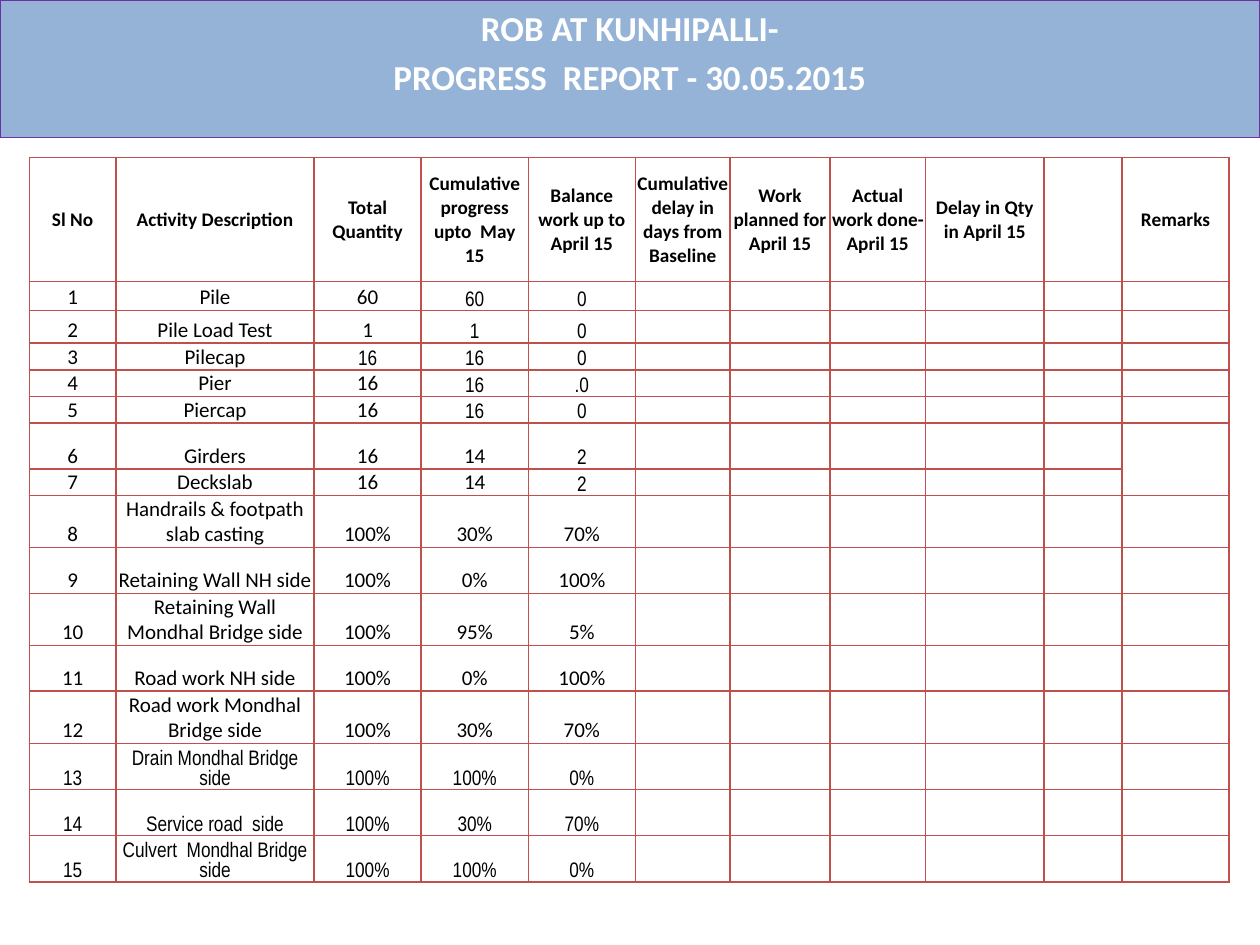
from lxml import etree
from pptx import Presentation
from pptx.dml.color import RGBColor
from pptx.enum.text import MSO_ANCHOR, MSO_AUTO_SIZE, PP_ALIGN
from pptx.oxml import parse_xml
from pptx.oxml.ns import nsdecls, qn
from pptx.util import Cm, Pt

TOP, MIDDLE, BOTTOM = MSO_ANCHOR.TOP, MSO_ANCHOR.MIDDLE, MSO_ANCHOR.BOTTOM
CENTER = PP_ALIGN.CENTER
NOFIT = MSO_AUTO_SIZE.NONE

BLUE = RGBColor(0x95, 0xB3, 0xD7)
PURPLE = RGBColor(0x70, 0x30, 0xA0)
RED = RGBColor(0xC0, 0x50, 0x4D)
WHITE = RGBColor(0xFF, 0xFF, 0xFF)
BLACK = RGBColor(0x00, 0x00, 0x00)
SANS, NARROW = "Calibri", "Arial Narrow"

HEADS = ["Sl No", "Activity Description", "Total Quantity",
         "Cumulative progress upto  May 15", "Balance work up to April 15",
         "Cumulative delay in days from Baseline",
         "Work planned for April 15", "Actual work done-April 15",
         "Delay in Qty in April 15", "", "Remarks"]

# Activity, total, progress, balance, first column in the narrow font, height
WORKS = [
    ("Pile", "60", "60", "0", 3, 0.58),
    ("Pile Load Test", "1", "1", "0", 3, 0.66),
    ("Pilecap", "16", "16", "0", 2, 0.53),
    ("Pier", "16", "16", ".0", 3, 0.53),
    ("Piercap", "16", "16", "0", 3, 0.53),
    ("Girders", "16", "14", "2", 4, 0.92),
    ("Deckslab", "16", "14", "2", 4, 0.53),
    ("Handrails & footpath slab casting", "100%", "30%", "70%", 5, 1.05),
    ("Retaining Wall NH side", "100%", "0%", "100%", 5, 0.92),
    ("Retaining Wall Mondhal Bridge side", "100%", "95%", "5%", 5, 1.05),
    ("Road work NH side", "100%", "0%", "100%", 5, 0.92),
    ("Road work Mondhal Bridge side", "100%", "30%", "70%", 5, 1.05),
    ("Drain Mondhal Bridge side", "100%", "100%", "0%", 0, 0.93),
    ("Service road  side", "100%", "30%", "70%", 0, 0.93),
    ("Culvert  Mondhal Bridge side", "100%", "100%", "0%", 0, 0.93),
]
WIDTHS = [1.75, 3.99, 2.16, 2.16, 2.16, 1.91, 2.01, 1.93, 2.39, 1.57, 2.16]
HEIGHTS = [2.51] + [work[-1] for work in WORKS]


def style(par, font, size, color, bold):
    par.alignment = CENTER
    for run in par.runs:
        run.font.name = font
        run.font.size = Pt(size)
        run.font.bold = bold
        run.font.color.rgb = color


def fill_cell(cell, text, font, size, bold, anchor):
    cell.fill.background()
    cell.vertical_anchor = anchor
    cell.margin_left = cell.margin_right = cell.margin_top = Cm(0.02)
    cell.margin_bottom = 0
    cell.text_frame.text = text
    par = cell.text_frame.paragraphs[0]
    style(par, font, size, BLACK, bold)
    if not text:
        # Small type keeps empty cells from stretching their row
        etree.SubElement(par._p, qn("a:endParaRPr")).set("sz", "800")
    props = cell._tc.get_or_add_tcPr()
    for spot, side in enumerate(("lnL", "lnR", "lnT", "lnB")):
        props.insert(spot, parse_xml(
            f'<a:{side} {nsdecls("a")} w="{Pt(1)}"><a:solidFill>'
            f'<a:srgbClr val="{RED}"/></a:solidFill></a:{side}>'))


deck = Presentation()
deck.slide_width, deck.slide_height = Cm(25.4), Cm(19.05)
slide = deck.slides.add_slide(deck.slide_layouts[5])

# Title band
title = slide.shapes.title
title.left, title.top, title.width, title.height = 0, 0, Cm(25.4), Cm(2.77)
title.fill.solid()
title.fill.fore_color.rgb = BLUE
title.line.color.rgb = PURPLE
title.line.width = Pt(0.75)
frame = title.text_frame
frame.text = "ROB AT KUNHIPALLI-\nPROGRESS  REPORT - 30.05.2015"
frame.auto_size = NOFIT
frame.vertical_anchor = TOP
for par in frame.paragraphs:
    style(par, SANS, 20, WHITE, True)
frame.paragraphs[1].space_before = Pt(4)

# Progress table
table = slide.shapes.add_table(
    len(HEIGHTS), len(WIDTHS), Cm(0.59), Cm(3.17),
    Cm(sum(WIDTHS)), Cm(sum(HEIGHTS))).table
table.first_row = table.horz_banding = False
for col, width in zip(table.columns, WIDTHS):
    col.width = Cm(width)
for row, height in zip(table.rows, HEIGHTS):
    row.height = Cm(height)

# Header row
for cell, text in zip(table.rows[0].cells, HEADS):
    fill_cell(cell, text, SANS, 11, True, MIDDLE)

# Numbered works, with the delay and remark columns left empty
for num, (*texts, first, height) in enumerate(WORKS, 1):
    texts = [str(num)] + texts
    texts += [""] * (len(WIDTHS) - len(texts))
    for spot, text in enumerate(texts):
        font = NARROW if spot >= first else SANS
        fill_cell(table.cell(num, spot), text, font, 12, False, BOTTOM)

# Girders and deckslab share one remark
table.cell(6, 10).merge(table.cell(7, 10))

deck.save("out.pptx")
